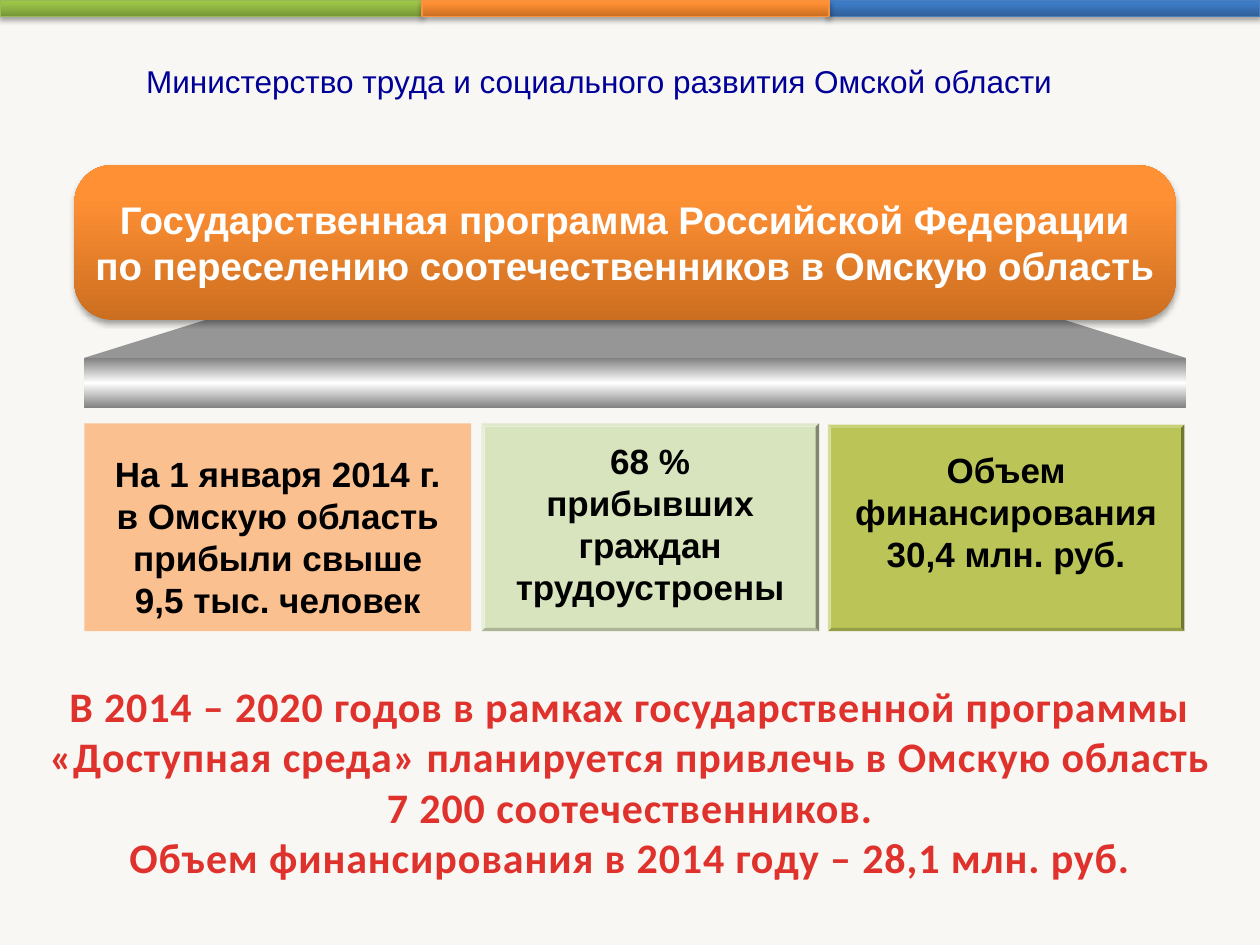
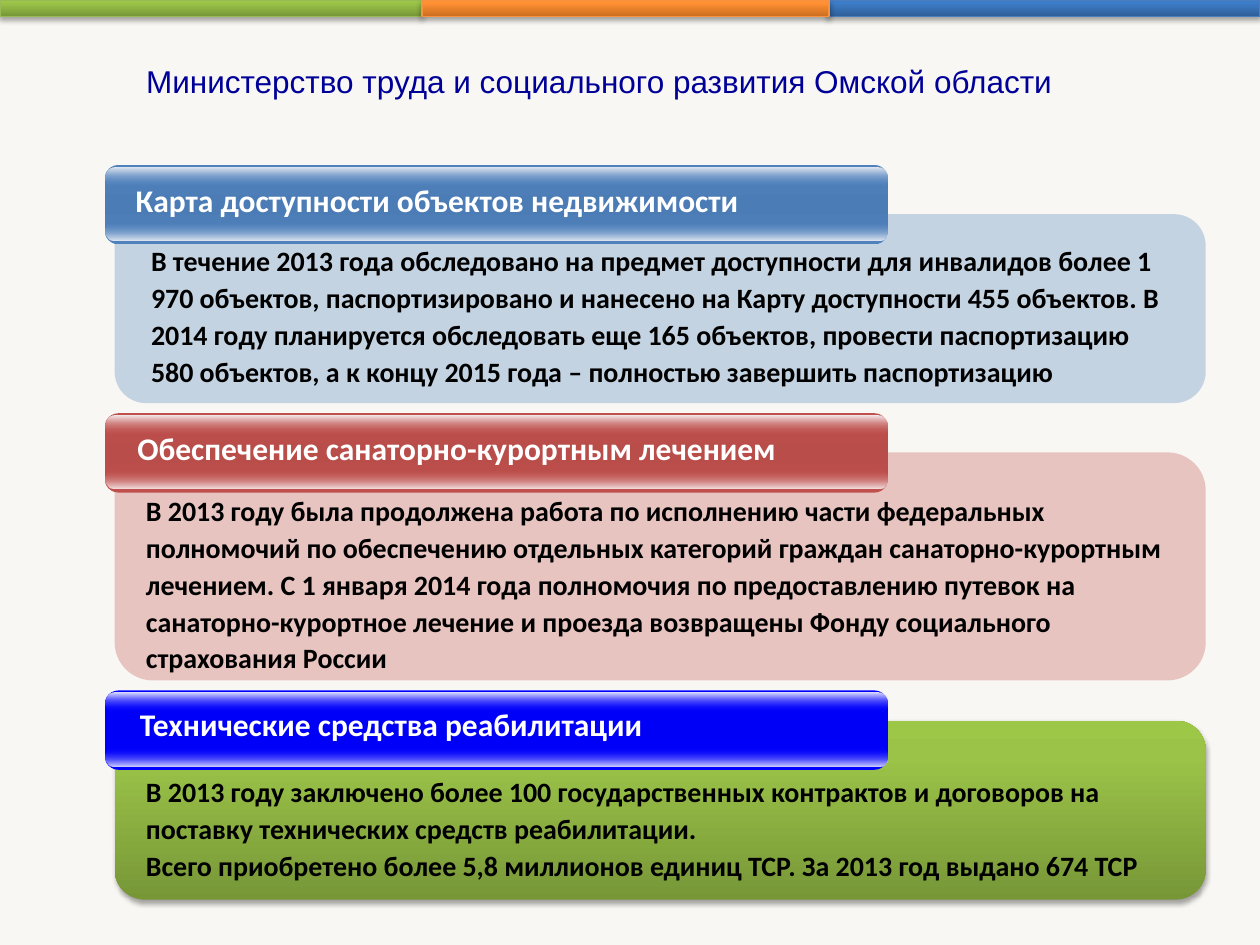
from lxml import etree
from pptx import Presentation
from pptx.dml.color import RGBColor
from pptx.enum import shapes, text
from pptx.oxml.ns import qn
from pptx.util import Inches, Pt

KIND = shapes.MSO_SHAPE
MID, LEFT = text.PP_ALIGN.CENTER, text.PP_ALIGN.LEFT
rgb = RGBColor.from_string

PAPER, NAVY, RED = rgb("F8F7F3"), rgb("000099"), rgb("E0322D")
BLACK, WHITE, STEEL = rgb("000000"), rgb("FFFFFF"), rgb("969696")
PEACH, MINT, OLIVE = rgb("FAC090"), rgb("D7E4BD"), rgb("BBC557")
BLUE, BRICK, PURE = rgb("4F81BD"), rgb("C0504D"), rgb("0000FF")

# Gradient stops: position, colour, opacity (percent)
GREEN_UP = [(0, rgb("779737"), 100), (80, rgb("9BC348"), 100), (100, rgb("9DC746"), 100)]
ORANGE_UP = [(0, rgb("CC6E20"), 100), (80, rgb("FF9034"), 100), (100, rgb("FF9136"), 100)]
BLUE_UP = [(0, rgb("2F5F99"), 100), (80, rgb("3D7CC7"), 100), (100, rgb("3A7CCB"), 100)]
CHROME = [(0, rgb("808080"), 100), (50, WHITE, 100), (100, rgb("808080"), 100)]

HEAD = "Министерство труда и социального развития Омской области"
STRIPES = [  # left, width, fill, line
    (0, 3.35, GREEN_UP, rgb("98B955")),
    (6.57, 3.43, BLUE_UP, rgb("4B7EBC")),
    (3.35, 3.23, ORANGE_UP, rgb("F69240")),
]

BANNER = ["Государственная программа Российской Федерации",
          "по переселению соотечественников в Омскую область"]
CARDS = [  # kind, box, fill, top margin, lines
    (KIND.RECTANGLE, (0.67, 3.36, 3.07, 1.65), PEACH, 0.23,
     ["На 1 января 2014 г.", "в Омскую область прибыли свыше", "9,5 тыс. человек"]),
    (KIND.BEVEL, (3.82, 3.36, 2.68, 1.65), MINT, 0.1,
     ["68 %", "прибывших", "граждан трудоустроены"]),
    (KIND.BEVEL, (6.57, 3.37, 2.83, 1.64), OLIVE, 0.16,
     ["Объем финансирования 30,4 млн. руб."]),
]
PLAN = ["В 2014 – 2020 годов в рамках государственной программы "
        "«Доступная среда» планируется привлечь в Омскую область",
        "7 200 соотечественников.",
        "Объем финансирования в 2014 году – 28,1 млн. руб."]

TOPICS = [
    dict(name="Карта доступности объектов недвижимости", spot=(0.83, 1.39, 5.28, 0.4),
         tab=1.31, hue=BLUE, core=rgb("4C7CB6"), low=rgb("E9EDF4"), high=rgb("E6EAF2"),
         panel=(1.7, 1.5), body=(1.1, 1.86, 8.31, 1.29), lines=[
             "В течение 2013 года обследовано на предмет доступности для инвалидов более "
             "1 970 объектов, паспортизировано и нанесено на Карту доступности "
             "455 объектов. В 2014 году планируется обследовать еще 165 объектов, "
             "провести паспортизацию 580 объектов, а к концу 2015 года – полностью "
             "завершить паспортизацию"]),
    dict(name="Обеспечение санаторно-курортным лечением", spot=(0.91, 3.36, 5.43, 0.4),
         tab=3.28, hue=BRICK, core=rgb("B94D4A"), low=rgb("F5EAEA"), high=rgb("F6EEEE"),
         panel=(3.59, 1.81), body=(1.06, 3.84, 8.31, 1.57), lines=[
             "В 2013 году была продолжена работа по исполнению части федеральных "
             "полномочий по обеспечению отдельных категорий граждан "
             "санаторно-курортным лечением. С 1 января 2014 года полномочия по "
             "предоставлению путевок на санаторно-курортное лечение и проезда "
             "возвращены Фонду социального страхования России"]),
    dict(name="Технические средства реабилитации", spot=(0.98, 5.55, 4.25, 0.4),
         tab=5.48, hue=PURE, core=rgb("0000F6"), low=rgb("E0E0FF"), high=rgb("E8E8FF"),
         panel=(5.72, 1.42), body=(1.06, 6.07, 8.31, 0.99), lines=[
             "В 2013 году заключено более 100 государственных контрактов и договоров "
             "на поставку технических средств реабилитации.",
             "Всего приобретено более 5,8 миллионов единиц ТСР. "
             "За 2013 год выдано 674 ТСР"]),
]


def sub(node, tag, **attrs):
    return etree.SubElement(node, qn(tag), {k: str(v) for k, v in attrs.items()})


def paint(shape, fill, up, alpha):
    """Fill with one colour or with a list of gradient stops."""
    props = shape._element.spPr
    if isinstance(fill, RGBColor):
        shape.fill.solid()
        shape.fill.fore_color.rgb = fill
        if alpha < 100:
            sub(props.find(".//" + qn("a:srgbClr")), "a:alpha", val=alpha * 1000)
        return
    shape.fill.gradient()
    shape.fill.gradient_angle = 90 if up else 270
    stops = props.find(".//" + qn("a:gsLst"))
    for old in list(stops):
        stops.remove(old)
    for pos, tone, solid in fill:
        color = sub(sub(stops, "a:gs", pos=pos * 1000), "a:srgbClr", val=tone)
        if solid < 100:
            sub(color, "a:alpha", val=solid * 1000)


def block(tree, kind, box, fill, adj=None, line=None, up=False, alpha=100, shade=False):
    shape = tree.add_shape(kind, *map(Inches, box))
    if adj is not None:
        shape.adjustments[0] = adj
    paint(shape, fill, up, alpha)
    if line is None:
        shape.line.fill.background()
    else:
        shape.line.color.rgb = line
        shape.line.width = Pt(0.75)
    shape.shadow.inherit = False
    if shade:
        glow = sub(shape._element.spPr.find(qn("a:effectLst")), "a:outerShdw",
                   blurRad=Pt(3.1), dist=Pt(1.8), dir=90 * 60000, rotWithShape=0)
        sub(sub(glow, "a:srgbClr", val=BLACK), "a:alpha", val=35000)
    return shape


def write(shape, lines, size, color, face="Arial", bold=True, align=MID,
          anchor=text.MSO_ANCHOR.TOP, wrap=True, space=None):
    frame = shape.text_frame
    frame.word_wrap = wrap
    frame.auto_size = text.MSO_AUTO_SIZE.NONE
    frame.vertical_anchor = anchor
    frame.text = "\n".join(lines)
    for par in frame.paragraphs:
        par.alignment = align
        if space:
            par.line_spacing = space
        font = par.font
        font.name, font.size, font.bold = face, Pt(size), bold
        font.color.rgb = color
    return frame


def label(slide, box, *args, **opts):
    return write(slide.shapes.add_textbox(*map(Inches, box)), *args, **opts)


def start(deck):
    """Add a slide with the shared background, stripes and heading."""
    slide = deck.slides.add_slide(deck.slide_layouts[5])
    slide.background.fill.solid()
    slide.background.fill.fore_color.rgb = PAPER
    for left, width, fill, line in STRIPES:
        block(slide.shapes, KIND.RECTANGLE, (left, 0, width, 0.13), fill,
              line=line, up=True, shade=True)
    head = slide.shapes.title
    head.left, head.top, head.width, head.height = map(Inches, (1.06, 0.44, 8.66, 0.73))
    write(head, [HEAD], 18, NAVY, bold=False, align=LEFT)
    return slide


def program(deck):
    slide = start(deck)
    tree = slide.shapes
    block(tree, KIND.TRAPEZOID, (0.67, 2.5, 8.74, 0.34), STEEL, adj=3.2)
    block(tree, KIND.RECTANGLE, (0.67, 2.84, 8.74, 0.4), CHROME)
    for kind, box, fill, top, lines in CARDS:
        card = block(tree, kind, box, fill, adj=0.016 if kind == KIND.BEVEL else None)
        write(card, lines, 20, BLACK).margin_top = Inches(top)
    banner = block(tree, KIND.ROUNDED_RECTANGLE, (0.59, 1.31, 8.74, 1.23), ORANGE_UP,
                   adj=0.245, up=True, shade=True)
    write(banner, BANNER, 22, WHITE, anchor=text.MSO_ANCHOR.MIDDLE, wrap=False)
    plan = label(slide, (0, 5.35, 10, 1.72), PLAN, 24, RED, face="Calibri")
    for par in plan.paragraphs:
        par.runs[0]._r.get_or_add_rPr().set("spc", "50")


def tab(tree, topic):
    """Draw a glossy heading plate: a base with a light edge below and above."""
    top, hue = topic["tab"], topic["hue"]
    plate = tree.add_group_shape().shapes
    parts = [
        ((0.83, top, 6.22, 0.63), 0.175, [(0, hue, 100), (50, topic["core"], 100), (100, hue, 100)]),
        ((0.84, top + 0.45, 6.2, 0.15), 0.5, [(0, hue, 0), (100, topic["low"], 100)]),
        ((0.84, top + 0.02, 6.2, 0.15), 0.5, [(0, topic["high"], 100), (100, hue, 0)]),
    ]
    for box, adj, fill in parts:
        block(plate, KIND.ROUNDED_RECTANGLE, box, fill, adj=adj)


def access(deck):
    slide = start(deck)
    tree = slide.shapes
    for topic in TOPICS:
        top, high = topic["panel"]
        last = topic is TOPICS[-1]
        block(tree, KIND.ROUNDED_RECTANGLE, (0.91, top, 8.66, high),
              GREEN_UP if last else topic["hue"], adj=0.167, up=True, alpha=30, shade=last)
        tab(tree, topic)
        label(slide, topic["spot"], [topic["name"]], 18, WHITE, face="Calibri")
        label(slide, topic["body"], topic["lines"], 16, BLACK, face="Calibri",
              align=LEFT, space=1.1)


def main():
    deck = Presentation()
    deck.slide_width, deck.slide_height = Inches(10), Inches(7.5)
    program(deck)
    access(deck)
    deck.save("out.pptx")


if __name__ == "__main__":
    main()
